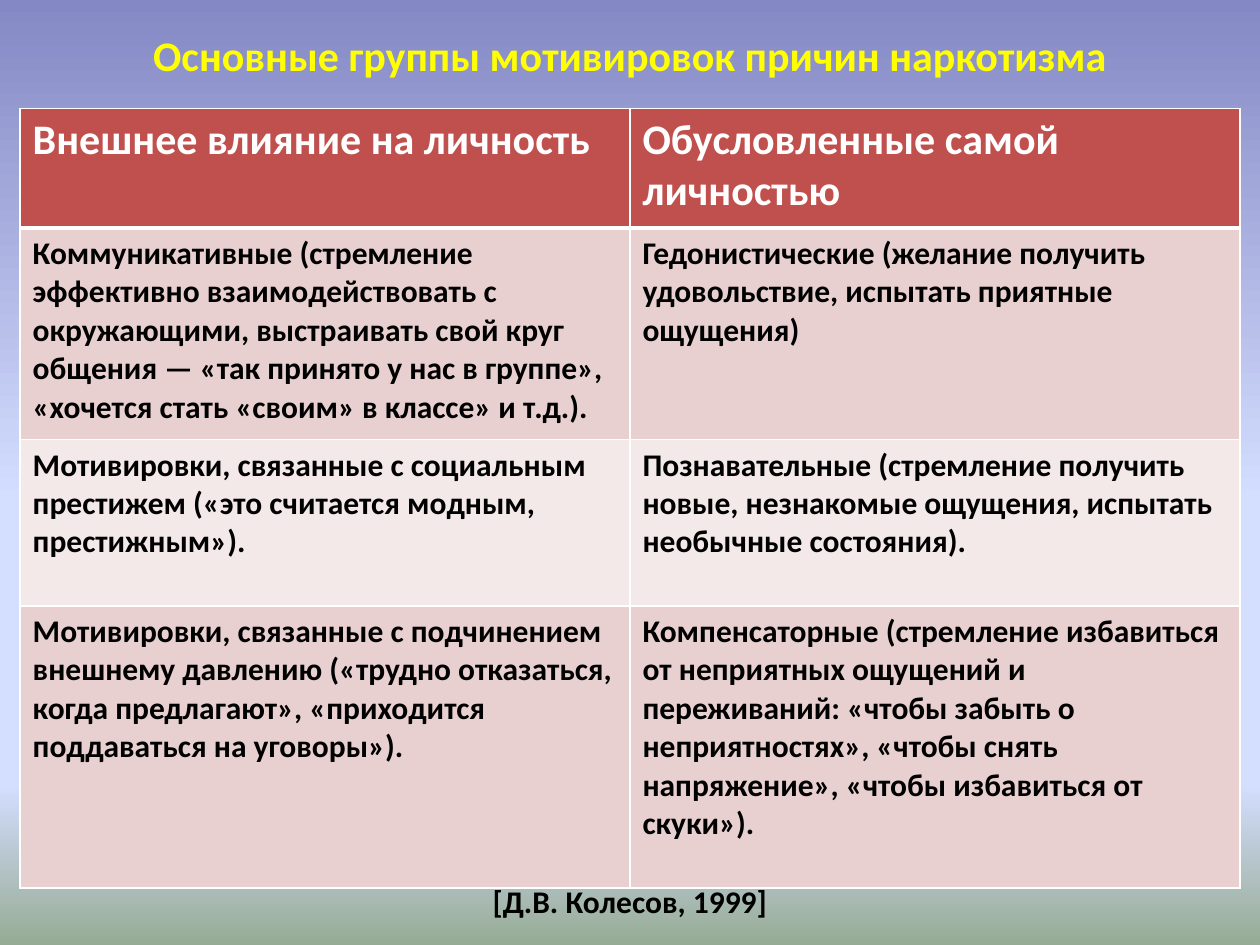
from lxml import etree
from pptx import Presentation
from pptx.dml.color import RGBColor
from pptx.enum.text import MSO_ANCHOR, PP_ALIGN
from pptx.oxml.ns import qn
from pptx.util import Inches, Pt

YELLOW = RGBColor(0xFF, 0xFF, 0x00)
WHITE = RGBColor(0xFF, 0xFF, 0xFF)
BLACK = RGBColor(0x00, 0x00, 0x00)
RED = RGBColor(0xC0, 0x50, 0x4D)
BANDS = [RGBColor(0xE8, 0xD0, 0xD0), RGBColor(0xF4, 0xE9, 0xE9)]
SKY_STOPS = [
    (0, RGBColor(0x84, 0x88, 0xC4)),
    (53, RGBColor(0xD4, 0xDE, 0xFF)),
    (83, RGBColor(0xD4, 0xDE, 0xFF)),
    (100, RGBColor(0x96, 0xAB, 0x94)),
]

TITLE = "Основные группы мотивировок причин наркотизма"
SOURCE = "[Д.В. Колесов, 1999]"
ROWS = [
    ("Внешнее влияние на личность", "Обусловленные самой личностью"),
    (
        "Коммуникативные (стремление эффективно взаимодействовать с окружающими, "
        "выстраивать свой круг общения — «так принято у нас в группе», "
        "«хочется стать «своим» в классе» и т.д.).",
        "Гедонистические (желание получить удовольствие, испытать приятные ощущения)",
    ),
    (
        "Мотивировки, связанные с социальным престижем "
        "(«это считается модным, престижным»).",
        "Познавательные (стремление получить новые, незнакомые ощущения, "
        "испытать необычные состояния).",
    ),
    (
        "Мотивировки, связанные с подчинением внешнему давлению («трудно отказаться, "
        "когда предлагают», «приходится поддаваться на уговоры»).",
        "Компенсаторные (стремление избавиться от неприятных ощущений и переживаний: "
        "«чтобы забыть о неприятностях», «чтобы снять напряжение», "
        "«чтобы избавиться от скуки»).",
    ),
]
ROW_HEIGHTS = [0.95, 1.68, 1.32, 2.24]
COLUMN_WIDTH = 4.84


def style_font(paragraph, size, color):
    font = paragraph.font
    font.name, font.size, font.bold = "Calibri", Pt(size), True
    font.color.rgb = color


def add_centred_text(slide, text, box, size, color, anchor):
    shape = slide.shapes.add_textbox(*map(Inches, box))
    frame = shape.text_frame
    frame.word_wrap = True
    frame.vertical_anchor = anchor
    paragraph = frame.paragraphs[0]
    paragraph.text = text
    paragraph.alignment = PP_ALIGN.CENTER
    style_font(paragraph, size, color)


def set_background(slide):
    fill = slide.background.fill
    fill.gradient()
    fill.gradient_angle = 270
    stop_list = slide.element.find(".//" + qn("a:gsLst"))
    for stop in list(stop_list):
        stop_list.remove(stop)
    for percent, color in SKY_STOPS:
        stop = etree.SubElement(stop_list, qn("a:gs"), pos=str(percent * 1000))
        etree.SubElement(stop, qn("a:srgbClr"), val=str(color))


def set_borders(cell, widths):
    """Draw white cell borders; widths maps L, R, T and B to points."""
    properties = cell._tc.get_or_add_tcPr()
    for index, (side, width) in enumerate(widths.items()):
        line = etree.Element(qn(f"a:ln{side}"), w=str(Pt(width)))
        solid = etree.SubElement(line, qn("a:solidFill"))
        etree.SubElement(solid, qn("a:srgbClr"), val=str(WHITE))
        properties.insert(index, line)


def add_motive_table(slide):
    columns = len(ROWS[0])
    table = slide.shapes.add_table(
        len(ROWS), columns, Inches(0.16), Inches(0.86),
        Inches(COLUMN_WIDTH * columns), Inches(sum(ROW_HEIGHTS)),
    ).table
    for column in table.columns:
        column.width = Inches(COLUMN_WIDTH)
    for index, (texts, height) in enumerate(zip(ROWS, ROW_HEIGHTS)):
        table.rows[index].height = Inches(height)
        header = index == 0
        borders = {"L": 1, "R": 1, "T": 3 if index == 1 else 1, "B": 3 if header else 1}
        for cell, text in zip(table.rows[index].cells, texts):
            cell.text = text
            cell.fill.solid()
            cell.fill.fore_color.rgb = RED if header else BANDS[(index - 1) % 2]
            set_borders(cell, borders)
            style_font(cell.text_frame.paragraphs[0],
                       24 if header else 18, WHITE if header else BLACK)


def main():
    presentation = Presentation()
    presentation.slide_width, presentation.slide_height = Inches(10), Inches(7.5)
    slide = presentation.slides.add_slide(presentation.slide_layouts[6])
    set_background(slide)
    add_centred_text(slide, TITLE, (0.5, 0.16, 9, 0.55), 24, YELLOW, MSO_ANCHOR.MIDDLE)
    add_motive_table(slide)
    add_centred_text(slide, SOURCE, (3.8, 6.95, 2.4, 0.4), 18, BLACK, MSO_ANCHOR.TOP)
    presentation.save("out.pptx")


if __name__ == "__main__":
    main()
